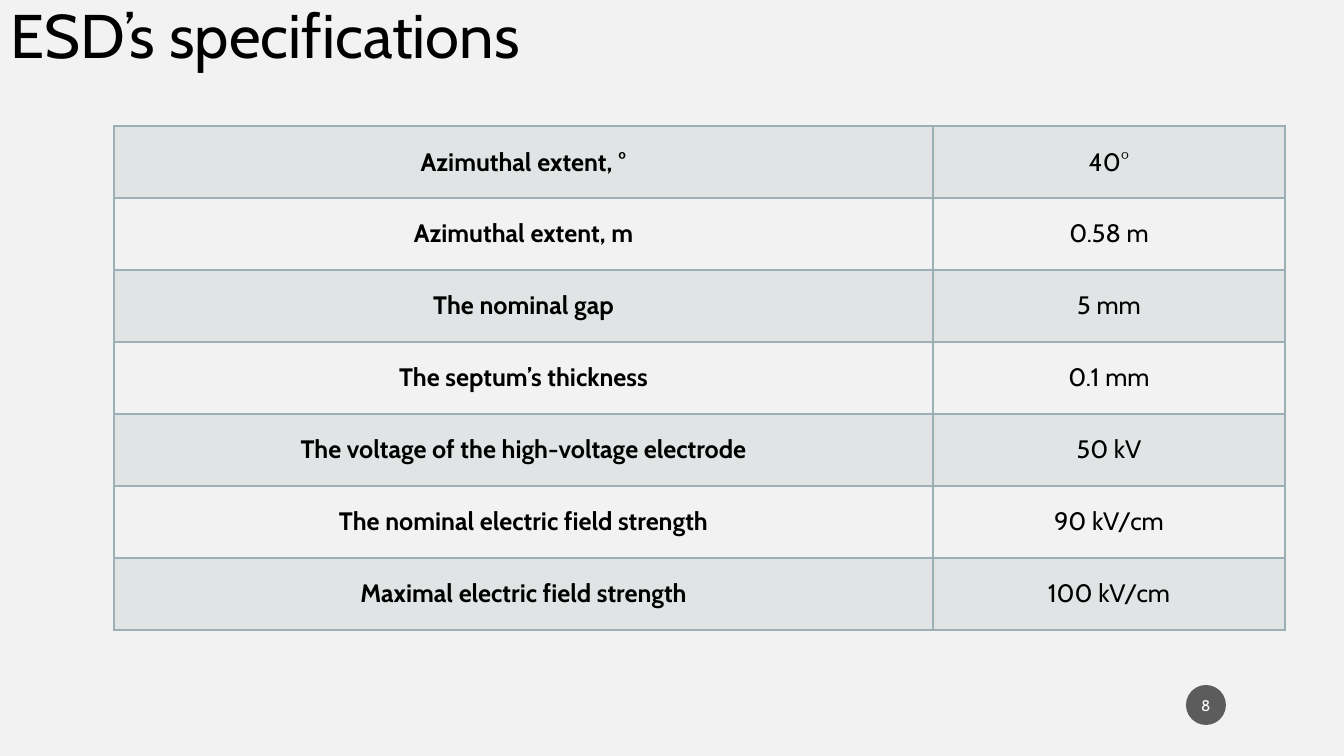
"""Build the slide that tabulates the ESD's specifications."""
from dataclasses import dataclass

from lxml.etree import SubElement
from pptx import Presentation
from pptx.dml.color import RGBColor
from pptx.enum.shapes import MSO_SHAPE
from pptx.enum.text import MSO_ANCHOR, PP_ALIGN
from pptx.oxml.ns import qn
from pptx.util import Emu, Pt

EMU_PER_PX = 914400 / 100.8


@dataclass(frozen=True)
class Theme:
    font: str = "Cabin"
    background: str = "F2F2F2"
    text: str = "000000"
    accent: str = "9BAFB5"
    badge: str = "1D1D1D"
    badge_text: str = "FFFFFF"
    title_size: int = 44
    cell_size: int = 18
    badge_size: int = 11
    border_width: int = 1
    band_alpha: int = 20
    badge_alpha: int = 70


def px(n):
    return Emu(round(n * EMU_PER_PX))


class SlideBuilder:
    def __init__(self, prs, theme):
        self.theme = theme
        self.s = prs.slides.add_slide(prs.slide_layouts[5])
        fill = self.s.background.fill
        fill.solid()
        fill.fore_color.rgb = RGBColor.from_string(theme.background)

    def add_text(self, tf, text, size, color, align=PP_ALIGN.CENTER, bold=False):
        p = tf.paragraphs[0]
        p.alignment = align
        r = p.add_run()
        r.text = text
        r.font.name = self.theme.font
        r.font.size = Pt(size)
        r.font.bold = bold
        r.font.color.rgb = RGBColor.from_string(color)
        return p

    def tint(self, fill, props, color, alpha):
        fill.solid()
        fill.fore_color.rgb = RGBColor.from_string(color)
        clr = props.find(qn("a:solidFill")).find(qn("a:srgbClr"))
        SubElement(clr, qn("a:alpha"), val=str(alpha * 1000))

    def title(self, text, x, y, w, h):
        sp = self.s.shapes.title
        sp.left, sp.top, sp.width, sp.height = map(px, (x, y, w, h))
        tf = sp.text_frame
        tf.word_wrap = True
        tf.vertical_anchor = MSO_ANCHOR.TOP
        p = self.add_text(tf, text, self.theme.title_size, self.theme.text, PP_ALIGN.LEFT)
        p.line_spacing = 0.9

    def badge(self, text, x, y, d):
        sp = self.s.shapes.add_shape(MSO_SHAPE.OVAL, *map(px, (x, y, d, d)))
        sp.shadow.inherit = False
        self.tint(sp.fill, sp._element.spPr, self.theme.badge, self.theme.badge_alpha)
        sp.line.fill.background()
        tf = sp.text_frame
        tf.margin_left = tf.margin_right = px(2)
        tf.margin_top = tf.margin_bottom = px(5)
        tf.vertical_anchor = MSO_ANCHOR.MIDDLE
        self.add_text(tf, text, self.theme.badge_size, self.theme.badge_text)

    def border(self, props):
        for side in ("lnL", "lnR", "lnT", "lnB"):
            ln = SubElement(props, qn(f"a:{side}"), w=str(Pt(self.theme.border_width)))
            fill = SubElement(ln, qn("a:solidFill"))
            SubElement(fill, qn("a:srgbClr"), val=self.theme.accent)

    def cell(self, cell, text, bold, banded):
        props = cell._tc.get_or_add_tcPr()
        self.border(props)
        if banded:
            self.tint(cell.fill, props, self.theme.accent, self.theme.band_alpha)
        else:
            cell.fill.background()
        cell.vertical_anchor = MSO_ANCHOR.MIDDLE
        self.add_text(cell.text_frame, text, self.theme.cell_size, self.theme.text, bold=bold)

    def table(self, rows, x, y, widths, row_h):
        size = (sum(widths), row_h * len(rows))
        frame = self.s.shapes.add_table(len(rows), len(widths), *map(px, (x, y, *size)))
        table = frame.table
        table.first_row = table.horz_banding = False
        for column, width in zip(table.columns, widths):
            column.width = px(width)
        for i, values in enumerate(rows):
            table.rows[i].height = px(row_h)
            for j, text in enumerate(values):
                self.cell(table.cell(i, j), text, bold=j == 0, banded=i % 2 == 0)


SPECIFICATIONS = [
    ("Azimuthal extent, °", "40°"),
    ("Azimuthal extent, m", "0.58 m"),
    ("The nominal gap", "5 mm"),
    ("The septum’s thickness", "0.1 mm"),
    ("The voltage of the high-voltage electrode", "50 kV"),
    ("The nominal electric field strength", "90 kV/cm"),
    ("Maximal electric field strength", "100 kV/cm"),
]


def main():
    prs = Presentation()
    prs.slide_width, prs.slide_height = px(1344), px(756)
    slide = SlideBuilder(prs, Theme())
    slide.badge("8", 1186, 685, 40)
    slide.table(SPECIFICATIONS, 114, 126, (819, 352), 72)
    slide.title("ESD’s specifications", 0, 0, 613, 75)
    prs.save("out.pptx")


if __name__ == "__main__":
    main()
